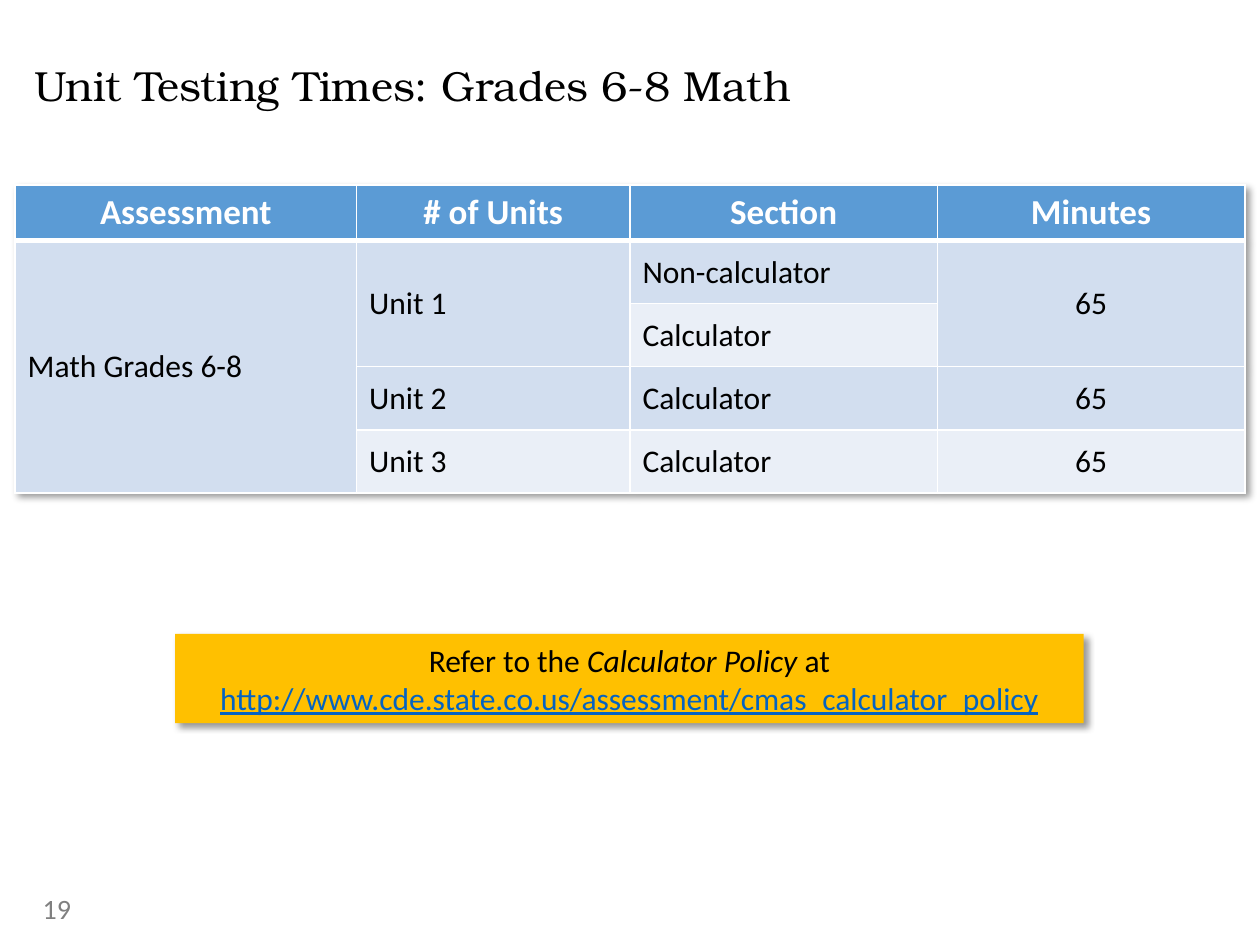
from lxml.etree import SubElement
from pptx import Presentation
from pptx.dml.color import RGBColor
from pptx.enum.shapes import MSO_SHAPE as Shape
from pptx.enum.text import MSO_ANCHOR as Anchor, MSO_AUTO_SIZE as Fit, PP_ALIGN as Align
from pptx.oxml import parse_xml
from pptx.oxml.ns import nsdecls, qn
from pptx.util import Inches, Pt

COLORS = {
    "black": "000000", "white": "FFFFFF", "gray": "808080", "header": "5B9BD5",
    "band": "D2DEEF", "light": "EAEFF7", "gold": "FFC000", "link": "0563C1",
}
COLUMNS, ROWS = 100, 75


class Deck:
    serif, sans = "TeX Gyre Bonum", "Calibri"

    def __init__(self):
        self.prs = Presentation()
        self.prs.slide_width, self.prs.slide_height = Inches(10), Inches(7.5)
        self.slide = self.prs.slides.add_slide(self.prs.slide_layouts[5])

    def across(self, columns):
        return round(self.prs.slide_width * columns / COLUMNS)

    def down(self, rows):
        return round(self.prs.slide_height * rows / ROWS)

    def area(self, left, top, width, height):
        return self.across(left), self.down(top), self.across(width), self.down(height)

    def color(self, name):
        return RGBColor.from_string(COLORS[name])

    def run(self, paragraph, text, size, color="black", font=None, **marks):
        run = paragraph.add_run()
        run.text = text
        run.font.name = font or self.sans
        run.font.size = Pt(size)
        run.font.color.rgb = self.color(color)
        for mark, value in marks.items():
            setattr(run.font, mark, value)

    def shadow(self, parent, position):
        parent.insert(position, parse_xml(
            f'<a:effectLst {nsdecls("a")}><a:outerShdw blurRad="{Pt(4)}" dist="{Pt(3)}" '
            f'dir="2700000" algn="tl" rotWithShape="0"><a:srgbClr val="{COLORS["black"]}">'
            '<a:alpha val="40000"/></a:srgbClr></a:outerShdw></a:effectLst>'))

    def title(self, text, *area):
        heading = self.slide.shapes.title
        heading.left, heading.top, heading.width, heading.height = self.area(*area)
        frame = heading.text_frame
        frame.margin_left = frame.margin_right = frame.margin_top = frame.margin_bottom = 0
        frame.vertical_anchor, frame.auto_size = Anchor.MIDDLE, Fit.NONE
        line = frame.paragraphs[0]
        line.alignment, line.line_spacing = Align.LEFT, 0.9
        self.run(line, text, 24, font=self.serif)

    def page_number(self, text, *area):
        frame = self.slide.shapes.add_textbox(*self.area(*area)).text_frame
        frame.word_wrap = True
        self.run(frame.paragraphs[0], text, 16, "gray")

    def callout(self, pieces, *area):
        box = self.slide.shapes.add_shape(Shape.RECTANGLE, *self.area(*area))
        box.fill.solid()
        box.fill.fore_color.rgb = self.color("gold")
        box.line.fill.background()
        properties = box.fill._xPr
        self.shadow(properties, len(properties))
        frame = box.text_frame
        frame.word_wrap, frame.auto_size = True, Fit.SHAPE_TO_FIT_TEXT
        line = frame.paragraphs[0]
        line.alignment = Align.CENTER
        for text, marks in pieces:
            self.run(line, text, 18, **marks)

    def borders(self, cell, bottom):
        properties = cell._tc.get_or_add_tcPr()
        for position, (side, width) in enumerate(
                [("lnL", 1), ("lnR", 1), ("lnT", 1), ("lnB", bottom)]):
            edge = SubElement(properties, qn("a:" + side), w=str(Pt(width)))
            fill = SubElement(edge, qn("a:solidFill"))
            SubElement(fill, qn("a:srgbClr"), val=COLORS["white"])
            properties.insert(position, edge)

    def cell(self, cell, text, fill, alignment, header):
        cell.fill.solid()
        cell.fill.fore_color.rgb = self.color(fill)
        cell.vertical_anchor = Anchor.MIDDLE
        if not header:
            cell.margin_top = cell.margin_bottom = Inches(0.1)
        self.borders(cell, 3 if header else 1)
        if text:
            line = cell.text_frame.paragraphs[0]
            line.alignment = alignment
            self.run(line, text, 20 if header else 18,
                     "white" if header else "black", bold=header)

    def table(self, rows, widths, heights, merges, left, top):
        table = self.slide.shapes.add_table(
            len(rows), len(widths),
            *self.area(left, top, sum(widths), sum(heights))).table
        table.horz_banding = False
        self.shadow(table._tbl.tblPr, 0)
        for column, width in zip(table.columns, widths):
            column.width = self.across(width)
        for row, height in zip(table.rows, heights):
            row.height = self.down(height)
        for r, texts in enumerate(rows):
            for c, text in enumerate(texts):
                header = r == 0
                fill = "header" if header else "band" if c == 0 or r % 2 else "light"
                centered = header or c == len(widths) - 1
                self.cell(table.cell(r, c), text, fill,
                          Align.CENTER if centered else Align.LEFT, header)
        for column, first, last in merges:
            table.cell(first, column).merge(table.cell(last, column))


def main():
    deck = Deck()
    deck.title("Unit Testing Times: Grades 6-8 Math", 2.7, 2.8, 66.5, 8.3)
    deck.page_number("19", 2.4, 70.3, 22.5, 4)
    deck.table(
        [["Assessment", "# of Units", "Section", "Minutes"],
         ["Math Grades 6-8", "Unit 1", "Non-calculator", "65"],
         ["", "", "Calculator", ""],
         ["", "Unit 2", "Calculator", "65"],
         ["", "Unit 3", "Calculator", "65"]],
        widths=[27.1, 21.7, 24.4, 24.4], heights=[4.4] + [5] * 4,
        merges=[(0, 1, 4), (1, 1, 2), (3, 1, 2)], left=1.2, top=14.7)
    deck.callout(
        [("Refer to the ", {}),
         ("Calculator Policy", {"italic": True}),
         (" at ", {}),
         ("http://www.cde.state.co.us/assessment/cmas_calculator_policy",
          {"color": "link", "underline": True})],
        13.9, 50.3, 72.1, 7.1)
    deck.prs.save("out.pptx")


if __name__ == "__main__":
    main()
